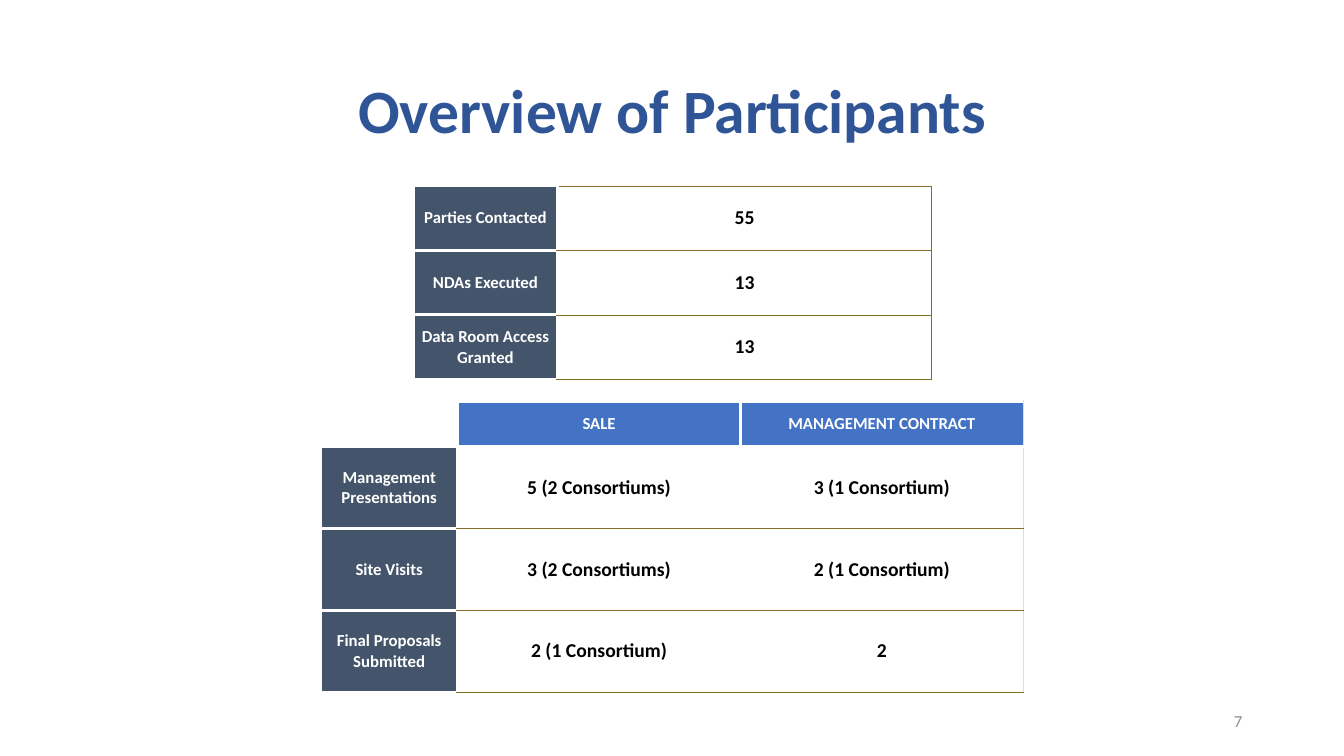
from lxml.etree import SubElement
from pptx import Presentation
from pptx.dml.color import RGBColor
from pptx.enum.text import MSO_ANCHOR as Anchor, PP_ALIGN as Align
from pptx.oxml.ns import qn
from pptx.util import Inches, Pt

WHITE, BLACK, NAVY, BLUE = "FFFFFF", "000000", "44546A", "4472C4"
TITLE_BLUE, GREY, OLIVE, PALE = "2F5597", "8C8C8C", "816E2C", "E2DECF"
THICK_WHITE, THIN_OLIVE, THIN_PALE = (WHITE, 2.25), (OLIVE, 0.5), (PALE, 1)


def rgb(code):
    return RGBColor.from_string(code)


class ParticipantSlide:
    font_name = "Calibri"

    def __init__(self, deck):
        self.width, self.height = deck.slide_width, deck.slide_height
        self.slide = deck.slides.add_slide(deck.slide_layouts[5])

    def across(self, percent):
        return round(self.width * percent / 100)

    def down(self, percent):
        return round(self.height * percent / 100)

    def box(self, left, top, width, height):
        return self.across(left), self.down(top), self.across(width), self.down(height)

    def set_text(self, frame, text, size, color, align=Align.CENTER, bold=True):
        frame.text = text
        paragraph = frame.paragraphs[0]
        paragraph.alignment = align
        font = paragraph.font
        font.name, font.size, font.bold = self.font_name, Pt(size), bold
        font.color.rgb = rgb(color)
        return paragraph

    def title(self, text, *area):
        heading = self.slide.shapes.title
        heading.left, heading.top, heading.width, heading.height = self.box(*area)
        heading.text_frame.vertical_anchor = Anchor.MIDDLE
        self.set_text(heading.text_frame, text, 44, TITLE_BLUE).line_spacing = 0.9

    def page_number(self, text, *area):
        frame = self.slide.shapes.add_textbox(*self.box(*area)).text_frame
        frame.word_wrap = True
        frame.vertical_anchor = Anchor.MIDDLE
        self.set_text(frame, text, 12, GREY, Align.RIGHT, False)

    def borders(self, cell, **edges):
        properties = cell._tc.get_or_add_tcPr()
        for side in "LRTB":
            color, points = edges.get(side, THICK_WHITE)
            line = SubElement(properties, qn(f"a:ln{side}"), w=str(Pt(points)))
            SubElement(SubElement(line, qn("a:solidFill")), qn("a:srgbClr"), val=color)

    def cell(self, cell, text, fill, size, color, margins, **edges):
        self.borders(cell, **edges)
        cell.fill.solid()
        cell.fill.fore_color.rgb = rgb(fill)
        cell.vertical_anchor = Anchor.MIDDLE
        cell.margin_left = cell.margin_right = Inches(margins[0])
        cell.margin_top = cell.margin_bottom = Inches(margins[1])
        self.set_text(cell.text_frame, text, size, color)

    def table(self, left, top, columns, heights, content, right_edge, has_header=False):
        area = self.box(left, top, sum(columns), sum(heights))
        table = self.slide.shapes.add_table(len(heights), len(columns), *area).table
        table.first_row = table.horz_banding = False
        for column, width in zip(table.columns, columns):
            column.width = self.across(width)
        for row, height in zip(table.rows, heights):
            row.height = self.down(height)
        for r, texts in enumerate(content):
            for c, text in enumerate(texts):
                is_header = has_header and r == 0
                right = right_edge if c == len(columns) - 1 else THICK_WHITE
                if is_header or c == 0:
                    fill = NAVY if not is_header else BLUE if text else WHITE
                    look, edges = (fill, 12, WHITE, (0.04, 0.02)), {"R": right}
                else:
                    above = THICK_WHITE if has_header and r == 1 else THIN_OLIVE
                    look = WHITE, 14, BLACK, (0.06, 0.04)
                    edges = {"R": right, "T": above, "B": THIN_OLIVE}
                self.cell(table.cell(r, c), text, *look, **edges)


def main():
    deck = Presentation()
    deck.slide_width, deck.slide_height = Inches(13.33), Inches(7.5)
    overview = ParticipantSlide(deck)
    overview.title("Overview of Participants", 6.9, 5.33, 86.27, 19.33)
    overview.page_number("7", 70.67, 92.67, 22.5, 5.33)

    outreach = [
        ("Parties Contacted", "55"),
        ("NDAs Executed", "13"),
        ("Data Room Access Granted", "13"),
    ]
    overview.table(30.76, 24.6, [10.73, 27.83], [8.53] * 3, outreach, THIN_OLIVE)

    proposals = [
        ("", "SALE", "MANAGEMENT CONTRACT"),
        ("Management Presentations", "5 (2 Consortiums)", "3 (1 Consortium)"),
        ("Site Visits", "3 (2 Consortiums)", "2 (1 Consortium)"),
        ("Final Proposals Submitted", "2 (1 Consortium)", "2"),
    ]
    overview.table(23.86, 53.07, [10.2, 21.04, 21.04], [6] + [10.83] * 3,
                   proposals, THIN_PALE, has_header=True)
    deck.save("out.pptx")


if __name__ == "__main__":
    main()
